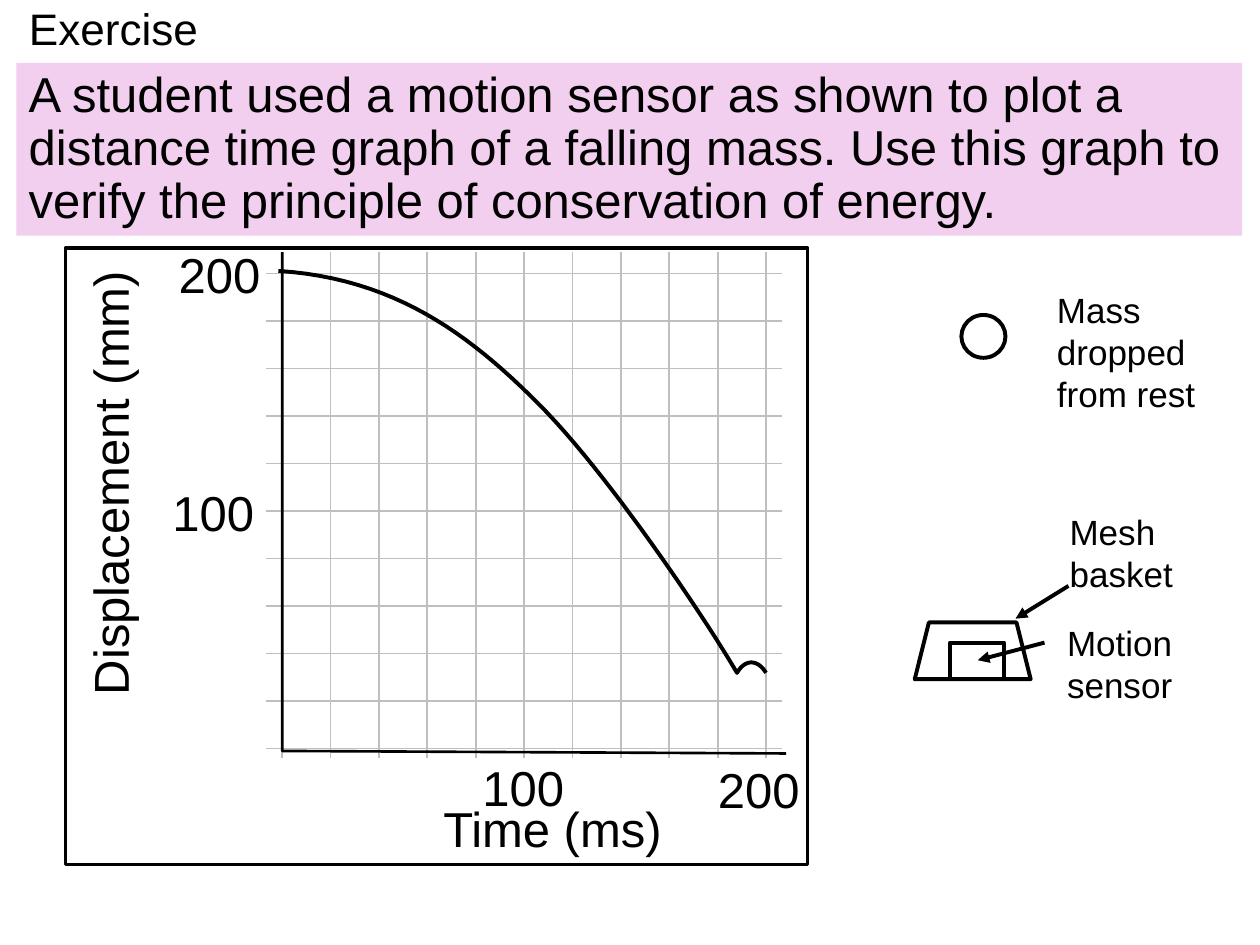
"""Build a slide with an energy conservation exercise, its graph and its apparatus."""
from lxml import etree
from pptx import Presentation
from pptx.dml.color import RGBColor
from pptx.enum.shapes import MSO_CONNECTOR, MSO_SHAPE
from pptx.enum.text import MSO_ANCHOR, PP_ALIGN
from pptx.oxml.ns import qn
from pptx.util import Inches, Pt

STRAIGHT = MSO_CONNECTOR.STRAIGHT
RECTANGLE, OVAL, TRAPEZOID = MSO_SHAPE.RECTANGLE, MSO_SHAPE.OVAL, MSO_SHAPE.TRAPEZOID
MIDDLE, LEFT = MSO_ANCHOR.MIDDLE, PP_ALIGN.LEFT
BLACK = RGBColor(0x00, 0x00, 0x00)
WHITE = RGBColor(0xFF, 0xFF, 0xFF)
GRID_GREY = RGBColor(0xBF, 0xBF, 0xBF)
PINK = RGBColor(0xF2, 0xCF, 0xEE)

presentation = Presentation()
presentation.slide_width = Inches(10)
presentation.slide_height = Inches(7.5)
slide = presentation.slides.add_slide(presentation.slide_layouts[5])


def add_text(text, left, top, width, height, size=28, wrap=True):
    box = slide.shapes.add_textbox(Inches(left), Inches(top), Inches(width), Inches(height))
    box.text_frame.word_wrap = wrap
    paragraph = box.text_frame.paragraphs[0]
    paragraph.text = text
    paragraph.font.name = "Arial"
    paragraph.font.size = Pt(size)
    paragraph.font.color.rgb = BLACK
    return box


def add_line(start, end, color, width):
    points = [Inches(value) for value in (*start, *end)]
    line = slide.shapes.add_connector(STRAIGHT, *points)
    line.line.color.rgb = color
    line.line.width = Pt(width)
    etree.SubElement(line._element.spPr, qn("a:effectLst"))
    return line


title = slide.shapes.title
title.left, title.top = Inches(0.13), Inches(0)
title.width, title.height = Inches(7.23), Inches(0.5)
title.text_frame.text = "Exercise"
title.text_frame.vertical_anchor = MIDDLE
paragraph = title.text_frame.paragraphs[0]
paragraph.alignment = LEFT
paragraph.line_spacing = 0.9
paragraph.font.name = "Arial"
paragraph.font.size = Pt(25.2)
paragraph.font.color.rgb = BLACK

question = add_text(
    "A student used a motion sensor as shown to plot a distance time graph of a falling mass. "
    "Use this graph to verify the principle of conservation of energy.",
    0.13, 0.5, 9.73, 1.37)
question.fill.solid()
question.fill.fore_color.rgb = PINK
question.text_frame.vertical_anchor = MIDDLE
question.text_frame.paragraphs[0].line_spacing = 0.9

for index in range(11):
    x = 2.24 + index * 3.84 / 10
    y = 2.17 + index * 3.77 / 10
    add_line((x, 2), (x, 6.02), GRID_GREY, 1)
    add_line((6.21, y), (2.11, y), GRID_GREY, 1)

displacement_label = add_text("Displacement (mm)", -0.93, 3.52, 3.61, 0.58)
displacement_label.rotation = 270
for text, left, top, width, wrap in [
    ("Time (ms)", 3.42, 6.29, 2, False),
    ("200", 1.32, 1.89, 0.88, False),
    ("100", 1.27, 3.78, 0.86, False),
    ("100", 3.73, 5.96, 1.07, True),
    ("200", 5.6, 5.98, 1.07, True),
]:
    add_text(text, left, top, width, 0.57, wrap=wrap)

axes = [(2.24, 2), (2.24, 5.96), (6.24, 5.98)]
curve = [(2.21, 2.15)]
for controls in [
    [(3.13, 2.21), (3.72, 2.65), (4.27, 3.2)],
    [(4.82, 3.75), (5.58, 4.88), (5.85, 5.34)],
    [(5.92, 5.22), (6.02, 5.24), (6.08, 5.34)],
]:
    bezier = [curve[-1], *controls]
    for step in range(1, 25):
        t = step / 24
        weights = ((1 - t) ** 3, 3 * t * (1 - t) ** 2, 3 * t ** 2 * (1 - t), t ** 3)
        curve.append(tuple(
            sum(weight * point[axis] for weight, point in zip(weights, bezier))
            for axis in (0, 1)))

for points, width in [(axes, 1.5), (curve, 2.25)]:
    vertices = [(Inches(x), Inches(y)) for x, y in points]
    builder = slide.shapes.build_freeform(*vertices[0])
    builder.add_line_segments(vertices[1:], close=False)
    shape = builder.convert_to_shape()
    shape.shadow.inherit = False
    shape.fill.background()
    shape.line.color.rgb = BLACK
    shape.line.width = Pt(width)

for kind, left, top, width, height, fill, line_width in [
    (RECTANGLE, 0.52, 1.97, 5.89, 4.89, None, 2),
    (RECTANGLE, 7.54, 5.1, 0.43, 0.29, WHITE, 2.25),
    (OVAL, 7.63, 2.5, 0.35, 0.34, WHITE, 2.25),
    (TRAPEZOID, 7.26, 4.94, 0.92, 0.45, None, 2.25),
]:
    shape = slide.shapes.add_shape(
        kind, Inches(left), Inches(top), Inches(width), Inches(height))
    shape.shadow.inherit = False
    if fill is None:
        shape.fill.background()
    else:
        shape.fill.solid()
        shape.fill.fore_color.rgb = fill
    shape.line.color.rgb = BLACK
    shape.line.width = Pt(line_width)

for text, left, top, width, height in [
    ("Mass dropped from rest", 8.29, 2.24, 1.57, 1.11),
    ("Mesh basket", 8.39, 4, 1.35, 0.77),
    ("Motion sensor", 8.37, 4.88, 1.35, 0.77),
]:
    label = add_text(text, left, top, width, height, size=20)
    label.text_frame.paragraphs[0].space_after = Pt(12)

for start, end in [((8.29, 5.1), (7.76, 5.24)), ((8.48, 4.65), (8.06, 4.91))]:
    arrow = add_line(start, end, BLACK, 2.25)
    etree.SubElement(arrow.get_or_add_ln(), qn("a:tailEnd"), type="triangle")

presentation.save("out.pptx")
